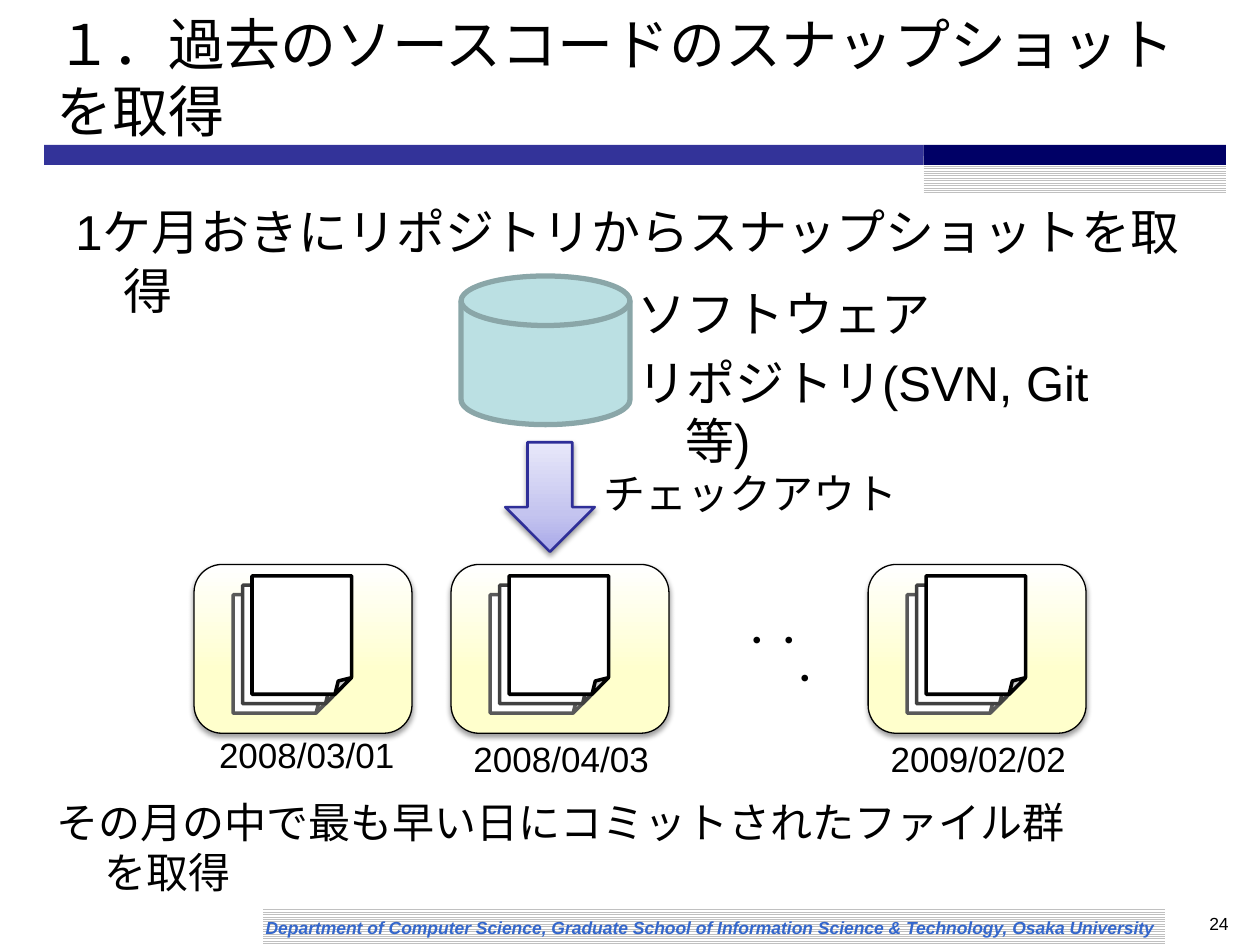
import copy

import lxml.etree
import pptx
import pptx.dml.color
import pptx.enum.dml
import pptx.enum.shapes
import pptx.enum.text
import pptx.oxml.ns
import pptx.util

Inches = pptx.util.Inches
RGBColor = pptx.dml.color.RGBColor
Shape = pptx.enum.shapes.MSO_SHAPE
Align = pptx.enum.text.PP_ALIGN
Anchor = pptx.enum.text.MSO_ANCHOR
qn = pptx.oxml.ns.qn

BLACK = RGBColor(0x00, 0x00, 0x00)
WHITE = RGBColor(0xFF, 0xFF, 0xFF)
SILVER = RGBColor(0xC0, 0xC0, 0xC0)
INDIGO = RGBColor(0x33, 0x33, 0x99)
NAVY = RGBColor(0x00, 0x00, 0x66)
FOOTER_BLUE = RGBColor(0x33, 0x66, 0xCC)
DISK_FILL = RGBColor(0xBB, 0xE0, 0xE3)
DISK_LINE = RGBColor(0x8A, 0xA6, 0xA8)
ARROW_LINE = RGBColor(0x2F, 0x2F, 0x98)
BACK_PAGE = RGBColor(0x59, 0x59, 0x59)
MIDDLE_PAGE = RGBColor(0x40, 0x40, 0x40)
CREAM = RGBColor(0xFF, 0xFF, 0xCC)
CARD_STOPS = ((0, CREAM), (0.35, CREAM), (1, WHITE))
ARROW_STOPS = (
    (0, RGBColor(0xA9, 0xA9, 0xE9)),
    (0.35, RGBColor(0xC4, 0xC4, 0xEF)),
    (1, RGBColor(0xE8, 0xE8, 0xFA)),
)


def write_text(frame, text, size=24, color=BLACK, bold=False, italic=False,
               align=Align.LEFT, hanging=0.38, font="Arial"):
    for index, line in enumerate(text.split("\n")):
        para = frame.paragraphs[0] if index == 0 else frame.add_paragraph()
        if hanging:
            properties = para._p.get_or_add_pPr()
            properties.set("marL", str(Inches(hanging)))
            properties.set("indent", str(-Inches(hanging)))
        if index:
            para.space_before = pptx.util.Pt(size * 0.2)
        para.alignment = align
        span = para.add_run()
        span.text = line
        span.font.name = font
        span.font.size = pptx.util.Pt(size)
        span.font.bold = bold
        span.font.italic = italic
        span.font.color.rgb = color


class SlideBuilder:
    def __init__(self, deck):
        self.page = deck.slides.add_slide(deck.slide_layouts[6])

    def shape(self, kind, left, top, width, height, fill=None, line=None,
              weight=1, parent=None):
        shapes = (parent or self.page).shapes
        box = shapes.add_shape(kind, Inches(left), Inches(top),
                               Inches(width), Inches(height))
        box.shadow.inherit = False
        if fill is not None:
            box.fill.solid()
            box.fill.fore_color.rgb = fill
        if line is None:
            box.line.fill.background()
        else:
            box.line.color.rgb = line
            box.line.width = pptx.util.Pt(weight)
        return box

    def striped(self, *place):
        box = self.shape(Shape.RECTANGLE, *place)
        box.fill.patterned()
        box.fill.pattern = pptx.enum.dml.MSO_PATTERN.LIGHT_HORIZONTAL
        box.fill.fore_color.rgb = SILVER
        box.fill.back_color.rgb = WHITE

    def raised(self, kind, *place, stops, line, weight):
        box = self.shape(kind, *place, line=line, weight=weight)
        box.fill.gradient()
        box.fill.gradient_angle = 90
        stop_list = box._element.spPr.find(".//" + qn("a:gsLst"))
        stop_list.append(copy.deepcopy(stop_list[-1]))
        for stop, (position, color) in zip(box.fill.gradient_stops, stops):
            stop.position = position
            stop.color.rgb = color
        effects = box._element.spPr.find(qn("a:effectLst"))
        shadow = lxml.etree.SubElement(
            effects, qn("a:outerShdw"), blurRad=str(pptx.util.Pt(3.1)),
            dist=str(pptx.util.Pt(1.6)), dir="5400000", rotWithShape="0")
        tint = lxml.etree.SubElement(shadow, qn("a:srgbClr"), val=str(BLACK))
        lxml.etree.SubElement(tint, qn("a:alpha"), val="38000")

    def text(self, text, left, top, width, height, anchor=Anchor.TOP, **style):
        box = self.page.shapes.add_textbox(Inches(left), Inches(top),
                                           Inches(width), Inches(height))
        box.text_frame.word_wrap = True
        box.text_frame.vertical_anchor = anchor
        write_text(box.text_frame, text, **style)

    def snapshot(self, left, date, date_left, date_top):
        self.raised(Shape.ROUNDED_RECTANGLE, left, 4.48, 1.73, 1.34,
                    stops=CARD_STOPS, line=BLACK, weight=0.75)
        files = self.page.shapes.add_group_shape()
        for index, color in enumerate((BACK_PAGE, MIDDLE_PAGE, BLACK)):
            self.shape(Shape.FOLDED_CORNER, left + 0.31 + 0.075 * index,
                       4.72 - 0.075 * index, 0.79, 0.94, fill=WHITE,
                       line=color, weight=2, parent=files)
        self.text(date, date_left, date_top, 1.73, 0.55, size=20)


def main():
    deck = pptx.Presentation()
    deck.slide_width = Inches(10)
    deck.slide_height = Inches(7.5)
    slide = SlideBuilder(deck)

    slide.striped(2.09, 7.2, 7.16, 0.3)
    slide.shape(Shape.RECTANGLE, 0.35, 1.15, 6.98, 0.16, fill=INDIGO)
    slide.striped(7.33, 1.24, 2.4, 0.3)
    slide.shape(Shape.RECTANGLE, 7.33, 1.15, 2.4, 0.16, fill=NAVY)
    slide.text("Department of Computer Science, Graduate School of "
               "Information Science & Technology, Osaka University",
               2.01, 7.23, 7.32, 0.27, anchor=Anchor.MIDDLE, size=10,
               color=FOOTER_BLUE, bold=True, italic=True, hanging=0)
    slide.text("24", 9.25, 7.2, 0.6, 0.3, size=10, align=Align.RIGHT, hanging=0)

    slide.text("１．過去のソースコードのスナップショットを取得",
               0.35, 0.13, 9.38, 0.95, anchor=Anchor.MIDDLE, size=32, hanging=0)
    slide.text("1ケ月おきにリポジトリからスナップショットを取得",
               0.5, 1.55, 9, 0.94, size=28)

    slide.shape(Shape.FLOWCHART_MAGNETIC_DISK, 3.66, 2.19, 1.34, 1.18,
                fill=DISK_FILL, line=DISK_LINE, weight=3)
    slide.text("ソフトウェア\nリポジトリ(SVN, Git等)", 4.96, 2.2, 4.02, 1.14,
               size=28)
    slide.raised(Shape.DOWN_ARROW, 4.01, 3.51, 0.71, 0.87,
                 stops=ARROW_STOPS, line=ARROW_LINE, weight=1.5)
    slide.text("チェックアウト", 4.69, 3.66, 4.02, 0.55)

    slide.snapshot(1.54, "2008/03/01", 1.64, 5.77)
    slide.snapshot(3.58, "2008/04/03", 3.66, 5.8)
    slide.snapshot(6.89, "2009/02/02", 6.97, 5.8)
    slide.text("・・・", 5.79, 4.88, 0.94, 0.47, size=18)
    slide.text("その月の中で最も早い日にコミットされたファイル群を取得",
               0.35, 6.27, 8.5, 0.55)

    deck.save("out.pptx")


if __name__ == "__main__":
    main()
